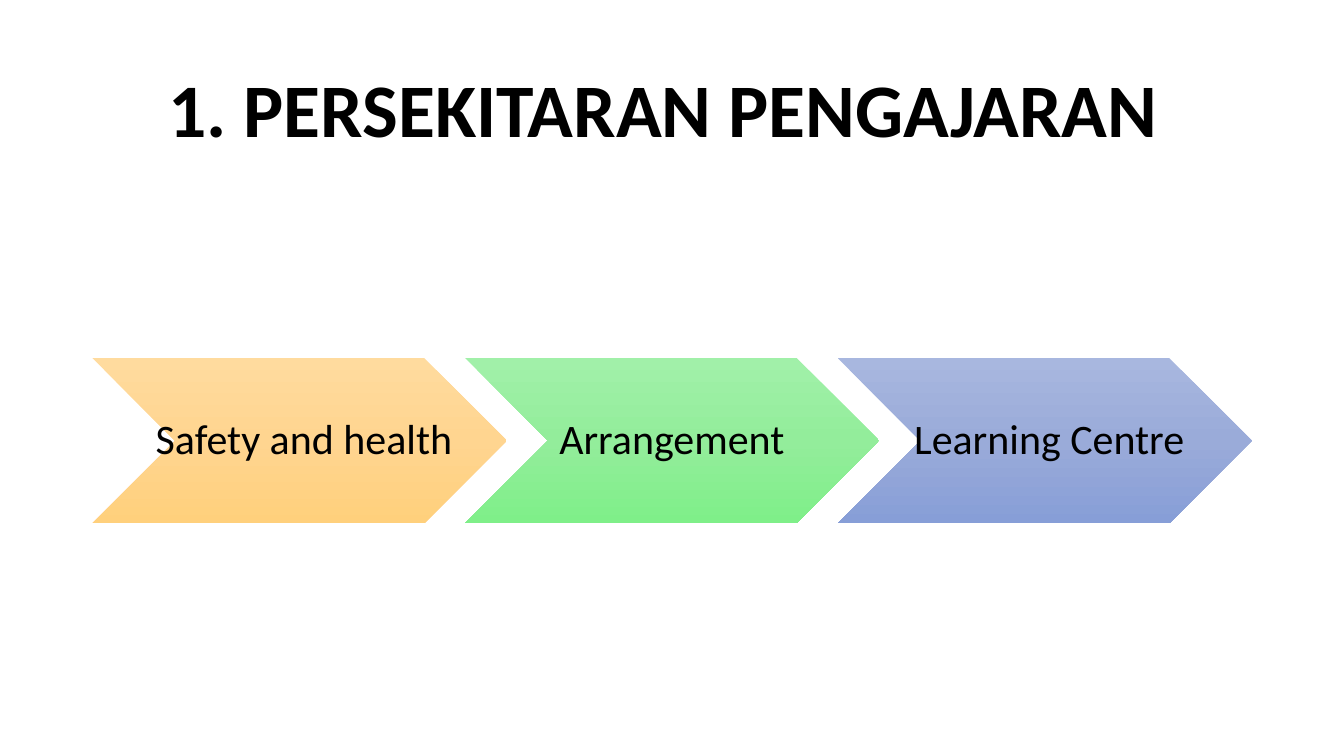
from copy import deepcopy
from dataclasses import dataclass

from pptx import Presentation
from pptx.dml.color import RGBColor
from pptx.enum import shapes, text
from pptx.slide import Slide
from pptx.text.text import TextFrame
from pptx.util import Cm, Pt

FONT = "Calibri"
BLACK = RGBColor(0x00, 0x00, 0x00)
ORANGES = (RGBColor(0xFF, 0xDB, 0x9E), RGBColor(0xFF, 0xD5, 0x90), RGBColor(0xFF, 0xD0, 0x7C))
GREENS = (RGBColor(0xA1, 0xF0, 0xA9), RGBColor(0x93, 0xED, 0x9B), RGBColor(0x7F, 0xEF, 0x89))
BLUES = (RGBColor(0xA8, 0xB7, 0xDF), RGBColor(0x9A, 0xAB, 0xD9), RGBColor(0x87, 0x9E, 0xD7))

LEFT = Cm(2.33)
CHEVRON_TOP = Cm(9.02)
CHEVRON_WIDTH = Cm(10.44)
CHEVRON_HEIGHT = Cm(4.17)
CHEVRON_PITCH = Cm(9.39)


@dataclass(frozen=True)
class Step:
    label: str
    shades: tuple[RGBColor, RGBColor, RGBColor]


STEPS = (
    Step("Safety and health", ORANGES),
    Step("Arrangement ", GREENS),
    Step("Learning Centre", BLUES),
)


def write_centred(frame: TextFrame, wording: str, size: int, bold: bool = False) -> None:
    frame.text = wording
    frame.vertical_anchor = text.MSO_ANCHOR.MIDDLE
    para = frame.paragraphs[0]
    para.alignment = text.PP_ALIGN.CENTER
    para.line_spacing = 0.9
    font = para.runs[0].font
    font.name, font.size, font.bold = FONT, Pt(size), bold
    font.color.rgb = BLACK


def add_title(page: Slide, wording: str) -> None:
    title = page.shapes.title
    title.left, title.top, title.width, title.height = LEFT, Cm(1.01), Cm(29.21), Cm(3.68)
    write_centred(title.text_frame, wording, 54, bold=True)


def add_step(page: Slide, position: int, step: Step) -> None:
    chevron = page.shapes.add_shape(
        shapes.MSO_SHAPE.CHEVRON,
        LEFT + position * CHEVRON_PITCH, CHEVRON_TOP, CHEVRON_WIDTH, CHEVRON_HEIGHT,
    )
    chevron.shadow.inherit = False
    chevron.line.fill.background()
    shade_downwards(chevron, step.shades)

    frame = chevron.text_frame
    frame.word_wrap = False
    frame.margin_left = Cm(0.34)
    frame.margin_right = frame.margin_top = frame.margin_bottom = Cm(0.11)
    write_centred(frame, step.label, 30)


def shade_downwards(shape, shades: tuple[RGBColor, ...]) -> None:
    """Fill with evenly spaced gradient stops, the first shade at the top."""
    fill = shape.fill
    fill.gradient()
    fill.gradient_angle = 270
    first_stop = shape.element.spPr.xpath("a:gradFill/a:gsLst/a:gs")[0]
    first_stop.addnext(deepcopy(first_stop))
    for index, (stop, shade) in enumerate(zip(fill.gradient_stops, shades)):
        stop.position = index / (len(shades) - 1)
        stop.color.rgb = shade


def main() -> None:
    deck = Presentation()
    deck.slide_width, deck.slide_height = Cm(33.87), Cm(19.05)
    page = deck.slides.add_slide(deck.slide_layouts.get_by_name("Title Only"))
    add_title(page, "1. PERSEKITARAN PENGAJARAN ")
    for position, step in enumerate(STEPS):
        add_step(page, position, step)
    deck.save("out.pptx")


if __name__ == "__main__":
    main()
